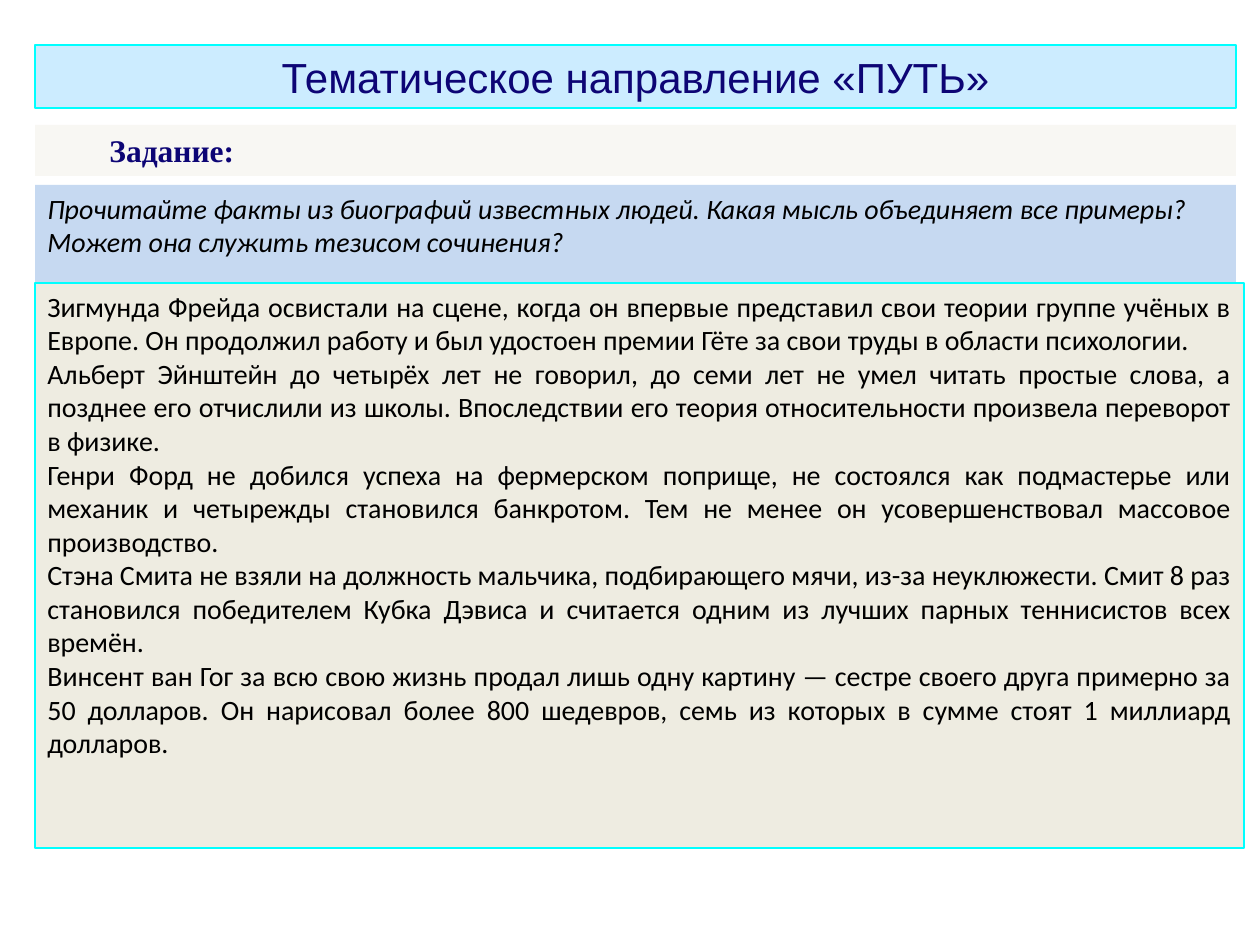
import dataclasses

import pptx
import pptx.dml.color
import pptx.enum.shapes
import pptx.enum.text
import pptx.util

PX = 914400 / 126  # EMU in one px
ALIGN = pptx.enum.text.PP_ALIGN


@dataclasses.dataclass(frozen=True)
class Theme:
    navy: str = "0D0575"
    black: str = "000000"
    cyan: str = "00FFFF"
    title_fill: str = "CCECFF"
    label_fill: str = "F8F7F3"
    question_fill: str = "C6D9F1"
    facts_fill: str = "EEECE1"
    title_size: int = 24
    label_size: int = 18
    body_size: int = 16


THEME = Theme()


def px(count):
    return pptx.util.Emu(round(count * PX))


def add_panel(page, top, width, height, fill, paragraphs, font, size, color,
              align=ALIGN.LEFT, line=None, bold=False, italic=False):
    """Add a filled rectangle at the left margin, with one style for its text."""
    box = page.shapes.add_shape(pptx.enum.shapes.MSO_SHAPE.RECTANGLE,
                                px(35), px(top), px(width), px(height))
    box.shadow.inherit = False
    box.fill.solid()
    box.fill.fore_color.rgb = pptx.dml.color.RGBColor.from_string(fill)
    if line:
        box.line.color.rgb = pptx.dml.color.RGBColor.from_string(line)
        box.line.width = pptx.util.Pt(0.75)
    else:
        box.line.fill.background()
    frame = box.text_frame
    frame.word_wrap = True
    frame.vertical_anchor = pptx.enum.text.MSO_ANCHOR.TOP
    frame.text = "\n".join(paragraphs)
    for para in frame.paragraphs:
        para.alignment = align
        for span in para.runs:
            span.font.name = font
            span.font.size = pptx.util.Pt(size)
            span.font.bold = bold
            span.font.italic = italic
            span.font.color.rgb = pptx.dml.color.RGBColor.from_string(color)
    return box


deck = pptx.Presentation()
deck.slide_width, deck.slide_height = px(1260), px(945)
page = deck.slides.add_slide(deck.slide_layouts[6])

add_panel(page, 45, 1201, 63, THEME.title_fill,
          ["Тематическое направление «ПУТЬ»"],
          "Arial", THEME.title_size, THEME.navy, ALIGN.CENTER, THEME.cyan)

add_panel(page, 185, 1201, 115, THEME.question_fill,
          ["Прочитайте факты из биографий известных людей. Какая мысль "
           "объединяет все примеры? Может она служить тезисом сочинения?"],
          "Calibri", THEME.body_size, THEME.black, italic=True)

facts = [
    "Зигмунда Фрейда освистали на сцене, когда он впервые представил свои "
    "теории группе учёных в Европе. Он продолжил работу и был удостоен "
    "премии Гёте за свои труды в области психологии.",
    "Альберт Эйнштейн до четырёх лет не говорил, до семи лет не умел читать "
    "простые слова, а позднее его отчислили из школы. Впоследствии его "
    "теория относительности произвела переворот в физике.",
    "Генри Форд не добился успеха на фермерском поприще, не состоялся как "
    "подмастерье или механик и четырежды становился банкротом. Тем не менее "
    "он усовершенствовал массовое производство.",
    "Стэна Смита не взяли на должность мальчика, подбирающего мячи, из-за "
    "неуклюжести. Смит 8 раз становился победителем Кубка Дэвиса и считается "
    "одним из лучших парных теннисистов всех времён.",
    "Винсент ван Гог за всю свою жизнь продал лишь одну картину — сестре "
    "своего друга примерно за 50 долларов. Он нарисовал более 800 шедевров, "
    "семь из которых в сумме стоят 1 миллиард долларов.",
]
add_panel(page, 283, 1209, 565, THEME.facts_fill, facts,
          "Calibri", THEME.body_size, THEME.black, ALIGN.JUSTIFY, THEME.cyan)

label = add_panel(page, 125, 1201, 51, THEME.label_fill, ["Задание:"],
                  "Times New Roman", THEME.label_size, THEME.navy,
                  ALIGN.JUSTIFY, bold=True)
first_line = label.text_frame.paragraphs[0]._p.get_or_add_pPr()
first_line.set("marL", "0")
first_line.set("indent", str(px(62)))

deck.save("out.pptx")
